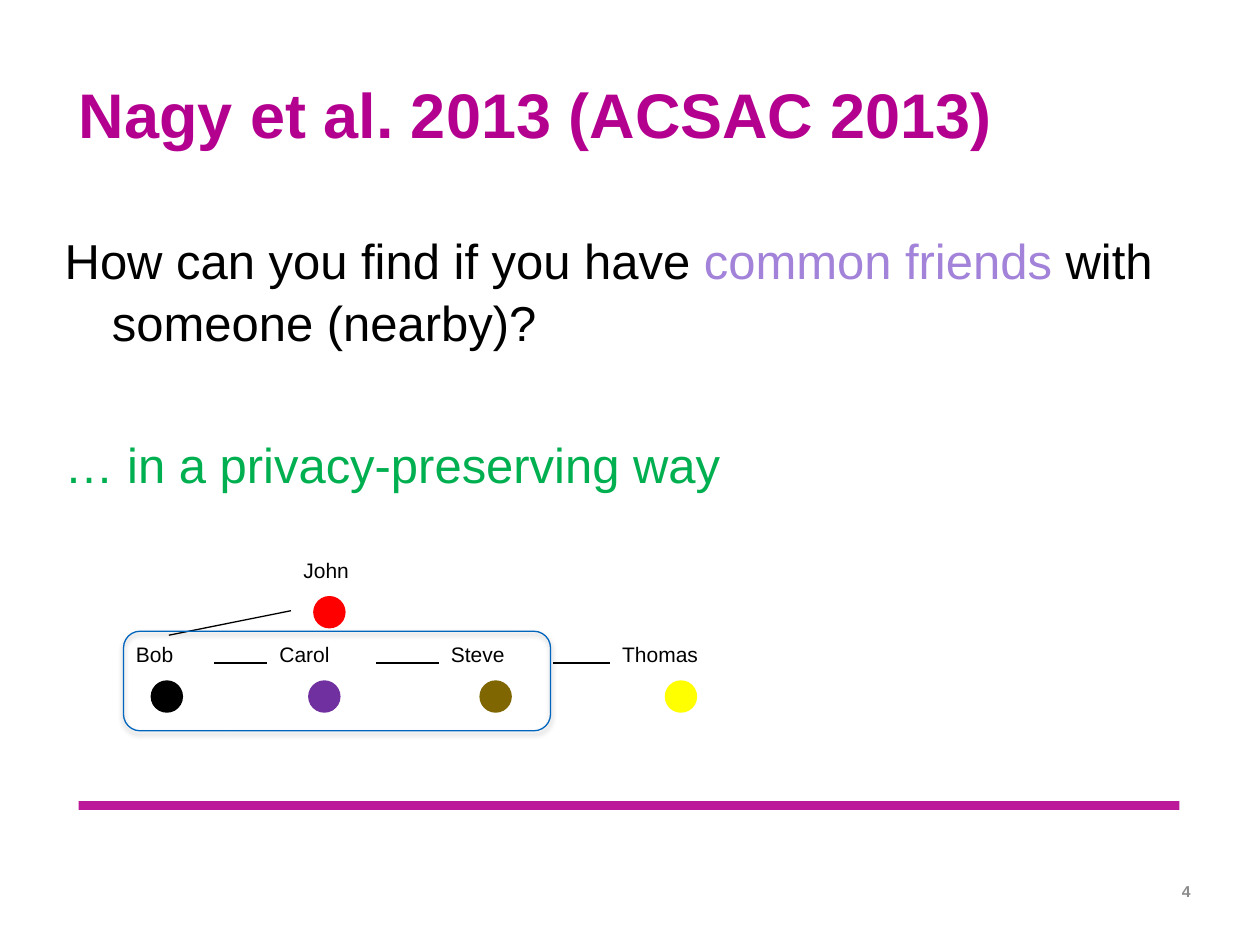
from itertools import pairwise

from lxml import etree
from pptx import Presentation
from pptx.dml.color import RGBColor as RGB
from pptx.enum.shapes import MSO_CONNECTOR as CONN, MSO_SHAPE as SHAPE
from pptx.enum.text import MSO_ANCHOR as ANCHOR, PP_ALIGN as ALIGN
from pptx.oxml.ns import qn
from pptx.util import Pt

THEME = dict(
    font="Arial", accent="B4008F", text="000000", friends="A283D9",
    private="00B050", number="8C8C8C", frame="0065BD",
    title_size=36, body_size=28, label_size=12, number_size=9,
)

TITLE = "Nagy et al. 2013 (ACSAC 2013)"
QUESTION = [
    ("How can you find if you have ", THEME["text"]),
    ("common friends ", THEME["friends"]),
    ("with someone (nearby)?", THEME["text"]),
]
ANSWER = [("… in a privacy-preserving way", THEME["private"])]
NUMBER = "4"

CHAIN = [
    dict(name="Bob", left=70.6, width=51.8, dot=87.1, color="000000"),
    dict(name="Carol", left=152.6, width=62.4, dot=177.1, color="7030A0"),
    dict(name="Steve", left=250.6, width=65.5, dot=275, color="7F6600"),
    dict(name="Thomas", left=348.5, width=83.5, dot=380.9, color="FFFF00"),
]
JOHN = dict(name="John", left=166.3, width=58.3, dot=180, color="FF0000")
CHAIN_TOP, JOHN_TOP = 363, 314.8
DOT_DROP, LINK_DROP, DOT_SIZE = 26.8, 15.8, 16.5


def pts(*values):
    """Convert numbers to point lengths."""
    return [Pt(v) for v in values]


def add_text(s, box, paragraphs, size, color=THEME["text"], bold=False, inset=(0, 0),
             align=ALIGN.LEFT, anchor=ANCHOR.TOP, spacing=1.0, gap=0, hang=0):
    """Add a text box whose paragraphs are strings or lists of (text, colour)."""
    tf = s.shapes.add_textbox(*pts(*box)).text_frame
    tf.word_wrap, tf.vertical_anchor = True, anchor
    tf.margin_left = tf.margin_right = Pt(inset[0])
    tf.margin_top = tf.margin_bottom = Pt(inset[1])
    for i, runs in enumerate(paragraphs):
        p = tf.add_paragraph() if i else tf.paragraphs[0]
        p.alignment, p.line_spacing = align, spacing
        if i:
            p.space_before = Pt(gap)
        if hang:
            p._p.get_or_add_pPr().set("marL", str(Pt(hang)))
            p._p.get_or_add_pPr().set("indent", str(-Pt(hang)))
        for text, tint in [(runs, color)] if isinstance(runs, str) else runs:
            r = p.add_run()
            r.text = text
            r.font.name, r.font.size, r.font.bold = THEME["font"], Pt(size), bold
            r.font.color.rgb = RGB.from_string(tint)


def add_shape(s, kind, box, fill=None, line=None, weight=0.75):
    """Add a preset shape without a shadow."""
    sp = s.shapes.add_shape(kind, *pts(*box))
    sp.shadow.inherit = False
    if fill:
        sp.fill.solid()
        sp.fill.fore_color.rgb = RGB.from_string(fill)
    else:
        sp.fill.background()
    if line:
        sp.line.color.rgb = RGB.from_string(line)
        sp.line.width = Pt(weight)
    else:
        sp.line.fill.background()
    return sp


def add_link(s, *ends):
    """Add a thin straight line between two points."""
    c = s.shapes.add_connector(CONN.STRAIGHT, *pts(*ends))
    c.line.color.rgb = RGB.from_string(THEME["text"])
    c.line.width = Pt(0.75)
    etree.SubElement(c._element.spPr, qn("a:effectLst"))


def add_alpha(color, percent):
    """Set the opacity of a colour element."""
    etree.SubElement(color, qn("a:alpha"), val=str(percent * 1000))


def add_person(s, person, top):
    """Add a name with its coloured dot below."""
    add_text(s, (person["left"], top, person["width"], 31.7), [person["name"]],
             THEME["label_size"], inset=(7.2, 3.6))
    add_shape(s, SHAPE.OVAL, (person["dot"], top + DOT_DROP, DOT_SIZE, DOT_SIZE),
              person["color"], person["color"], 2)


def add_frame(s):
    """Add the outlined group with a soft shadow."""
    sp = add_shape(s, SHAPE.ROUNDED_RECTANGLE, (70.6, 360.7, 244, 56.9), line=THEME["frame"])
    effects = sp._element.spPr.find(qn("a:effectLst"))
    shadow = etree.SubElement(effects, qn("a:outerShdw"), blurRad=str(Pt(3.1)),
                              dist=str(Pt(1.8)), dir="5400000", rotWithShape="0")
    add_alpha(etree.SubElement(shadow, qn("a:srgbClr"), val="000000"), 35)


def main():
    """Build and save the slide."""
    prs = Presentation()
    prs.slide_width, prs.slide_height = pts(720, 540)
    s = prs.slides.add_slide(prs.slide_layouts[6])

    bar = add_shape(s, SHAPE.RECTANGLE, (45, 457.8, 629, 5), THEME["accent"])
    add_alpha(bar._element.spPr.find(qn("a:solidFill"))[0], 90)
    add_text(s, (558.7, 504, 121.7, 10), [NUMBER], THEME["number_size"], THEME["number"],
             bold=True, align=ALIGN.RIGHT, anchor=ANCHOR.MIDDLE)
    add_text(s, (45, 38.9, 629, 85), [TITLE], THEME["title_size"], THEME["accent"],
             bold=True, spacing=1.1)
    add_text(s, (37, 130, 648, 356), [QUESTION, ANSWER], THEME["body_size"],
             spacing=1.05, gap=46, hang=27)

    add_person(s, JOHN, JOHN_TOP)
    for person in CHAIN:
        add_person(s, person, CHAIN_TOP)
    for a, b in pairwise(CHAIN):
        y = CHAIN_TOP + LINK_DROP
        add_link(s, a["left"] + a["width"], y, b["left"], y)
    bob = CHAIN[0]
    add_link(s, bob["left"] + bob["width"] / 2, CHAIN_TOP, JOHN["left"], 349)
    add_frame(s)
    prs.save("out.pptx")


if __name__ == "__main__":
    main()
